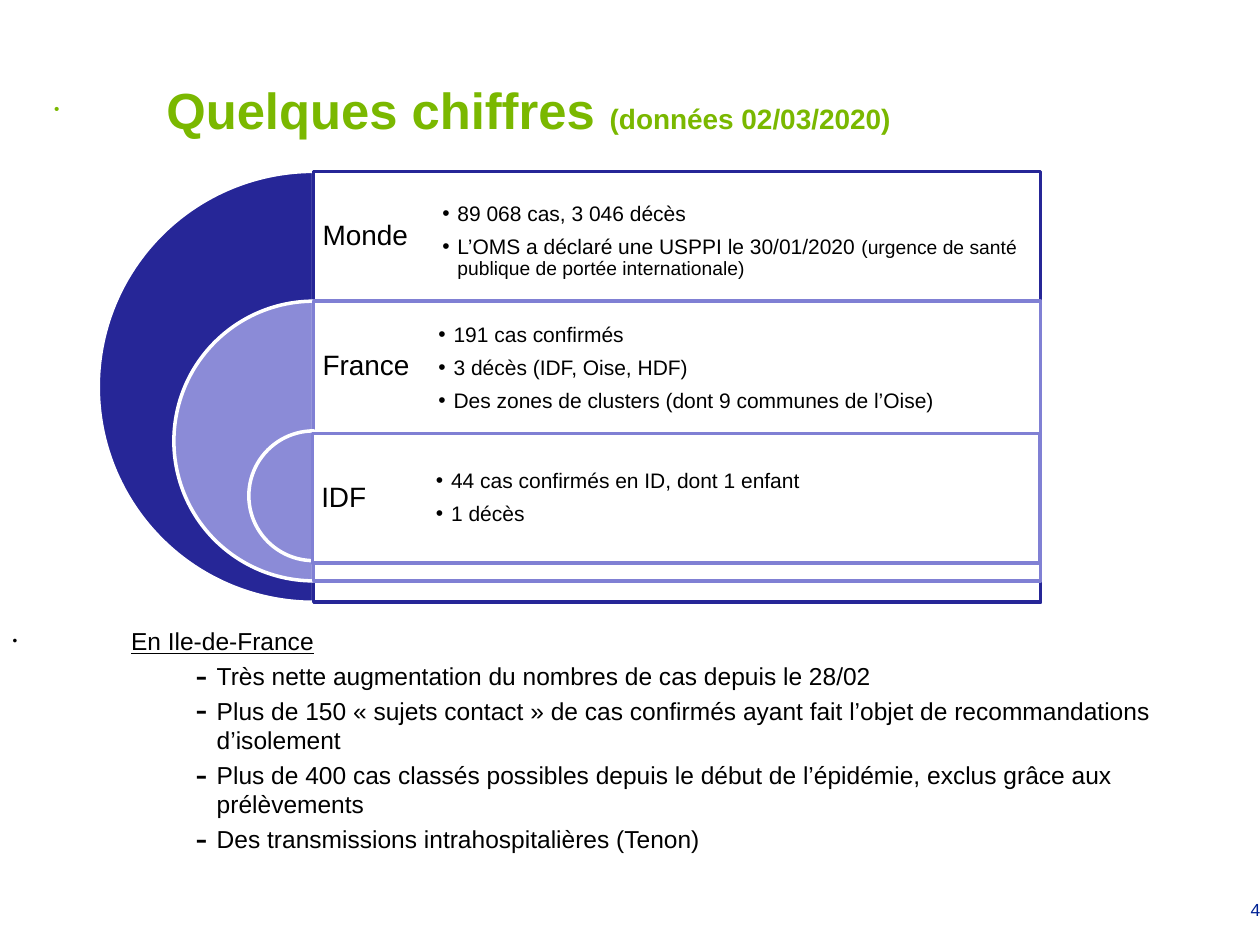
"""Build the slide of key figures with nested half discs and a list for Ile-de-France."""
from lxml import etree
from pptx import Presentation
from pptx.dml.color import RGBColor
from pptx.enum.shapes import MSO_SHAPE
from pptx.enum.text import MSO_ANCHOR, MSO_AUTO_SIZE, PP_ALIGN
from pptx.oxml.ns import qn
from pptx.util import Inches, Pt

PIE, RECT = MSO_SHAPE.PIE, MSO_SHAPE.RECTANGLE
MIDDLE, NO_FIT = MSO_ANCHOR.MIDDLE, MSO_AUTO_SIZE.NONE
LEFT, RIGHT = PP_ALIGN.LEFT, PP_ALIGN.RIGHT

FONT = "Arial"
COLORS = {"navy": "262697", "lilac": "8B8BD7", "violet": "8080D4", "white": "FFFFFF",
          "black": "000000", "green": "7AB800", "number": "002395"}

TITLE = [("Quelques chiffres ", 29), ("(données 02/03/2020)", 16)]
PAGE = "4"
REGION = "En Ile-de-France"
REGION_POINTS = [
    "Très nette augmentation du nombres de cas depuis le 28/02",
    "Plus de 150 «\u00a0sujets contact\u00a0» de cas confirmés ayant fait l’objet de recommandations d’isolement",
    "Plus de 400 cas classés possibles depuis le début de l’épidémie, exclus grâce aux prélèvements",
    "Des transmissions intrahospitalières (Tenon)",
]
LEVELS = [
    {"label": "Monde", "disc": "navy", "frame": "navy", "size": 3.42,
     "frame_at": (2.49, 1.36), "points_at": (3.24, 1.4), "points_width": 5.15,
     "points": [[("89 068 cas, 3 046 décès", 12)],
                [("L’OMS a déclaré une USPPI le 30/01/2020 ", 12),
                 ("(urgence de santé publique de portée internationale)", 11)]]},
    {"label": "France", "disc": "lilac", "frame": "violet", "size": 2.22,
     "frame_at": (2.49, 2.39), "points_at": (3.21, 2.41), "points_width": 5.15,
     "points": [[("191 cas confirmés", 12)],
                [("3 décès (IDF, Oise, HDF)", 12)],
                [("Des zones de clusters (dont 9 communes de l’Oise)", 12)]]},
    {"label": "IDF", "disc": "lilac", "frame": "violet", "size": 1.03,
     "frame_at": (2.48, 3.44), "points_at": (3.19, 3.44), "points_width": 5.27,
     "points": [[("44 cas confirmés en ID, dont 1 enfant", 12)],
                [("1 décès", 12)]]},
]
AXIS, TOP, ROW = 2.49, 1.36, 1.03
FRAME_WIDTH = 5.77


def rgb(name):
    return RGBColor.from_string(COLORS[name])


def place(sp, x, y, w, h):
    sp.left, sp.top, sp.width, sp.height = (Inches(v) for v in (x, y, w, h))


def add_runs(p, runs, color="black", bold=False, underline=False):
    for text, size in runs:
        r = p.add_run()
        r.text = text
        font = r.font
        font.name, font.size, font.bold, font.underline = FONT, Pt(size), bold, underline
        font.color.rgb = rgb(color)


def set_bullet(p, char, margin, hang, percent=100):
    pPr = p._p.get_or_add_pPr()
    pPr.set("marL", str(Inches(margin)))
    pPr.set("indent", str(-Inches(hang)))
    for tag, key, value in (("buSzPct", "val", str(percent * 1000)),
                            ("buFont", "typeface", FONT), ("buChar", "char", char)):
        etree.SubElement(pPr, qn("a:" + tag)).set(key, value)


def next_paragraph(tf, i):
    return tf.add_paragraph() if i else tf.paragraphs[0]


def add_text_box(slide, x, y, w, h, inset):
    sp = slide.shapes.add_textbox(Inches(x), Inches(y), Inches(w), Inches(h))
    tf = sp.text_frame
    tf.word_wrap, tf.vertical_anchor = True, MIDDLE
    tf.margin_left = tf.margin_right = tf.margin_top = tf.margin_bottom = Inches(inset)
    return tf


def add_outlined(slide, kind, x, y, w, h, fill, line):
    sp = slide.shapes.add_shape(kind, Inches(x), Inches(y), Inches(w), Inches(h))
    sp.shadow.inherit = False
    sp.fill.solid()
    sp.fill.fore_color.rgb = rgb(fill)
    sp.line.color.rgb = rgb(line)
    sp.line.width = Pt(2)
    return sp


def add_level(slide, i, level):
    size = level["size"]
    disc = add_outlined(slide, PIE, AXIS - size / 2, TOP + i * ROW, size, size,
                        level["disc"], "white")
    disc.adjustments[0], disc.adjustments[1] = 54, 162
    x, y = level["frame_at"]
    frame = add_outlined(slide, RECT, x, y, FRAME_WIDTH, size, "white", level["frame"])
    color = frame._element.spPr.find(qn("a:solidFill"))[0]
    etree.SubElement(color, qn("a:alpha")).set("val", "90000")
    p = add_text_box(slide, x, y, FRAME_WIDTH / 2, ROW, 0.07).paragraphs[0]
    p.line_spacing = 0.9
    add_runs(p, [(level["label"], 16)])


def add_points(slide, level):
    tf = add_text_box(slide, *level["points_at"], level["points_width"], ROW, 0.27)
    for i, runs in enumerate(level["points"]):
        p = next_paragraph(tf, i)
        set_bullet(p, "•", 0.12, 0.12)
        p.line_spacing, p.space_after = 0.9, Pt(6)
        add_runs(p, runs)


def fill_title(sp):
    place(sp, 0.33, 0.24, 8.92, 1.25)
    tf = sp.text_frame
    tf.auto_size, tf.vertical_anchor = NO_FIT, MIDDLE
    p = tf.paragraphs[0]
    p.alignment = LEFT
    set_bullet(p, "•", 0.89, 0.89, 30)
    add_runs(p, TITLE, "green", bold=True)


def fill_body(sp):
    place(sp, 0, 4.92, 10.04, 2.08)
    tf = sp.text_frame
    tf.auto_size = NO_FIT
    for i, text in enumerate([REGION] + REGION_POINTS):
        p = next_paragraph(tf, i)
        if i:
            p.level = 1
            set_bullet(p, "-", 1.62, 0.17, 150)
        else:
            set_bullet(p, "•", 0.94, 0.94, 55)
        p.space_before = Pt(3 if i else 0)
        add_runs(p, [(text, 14)], underline=i == 0)


def main():
    prs = Presentation()
    prs.slide_width, prs.slide_height = Inches(10), Inches(7.5)
    slide = prs.slides.add_slide(prs.slide_layouts[1])
    fill_title(slide.shapes.title)
    fill_body(slide.placeholders[1])
    for i, level in enumerate(LEVELS):
        add_level(slide, i, level)
    for level in LEVELS:
        add_points(slide, level)
    tf = add_text_box(slide, 9.6, 7.08, 0.5, 0.28, 0.1)
    p = tf.paragraphs[0]
    p.alignment = RIGHT
    add_runs(p, [(PAGE, 10)], "number")
    prs.save("out.pptx")


if __name__ == "__main__":
    main()
